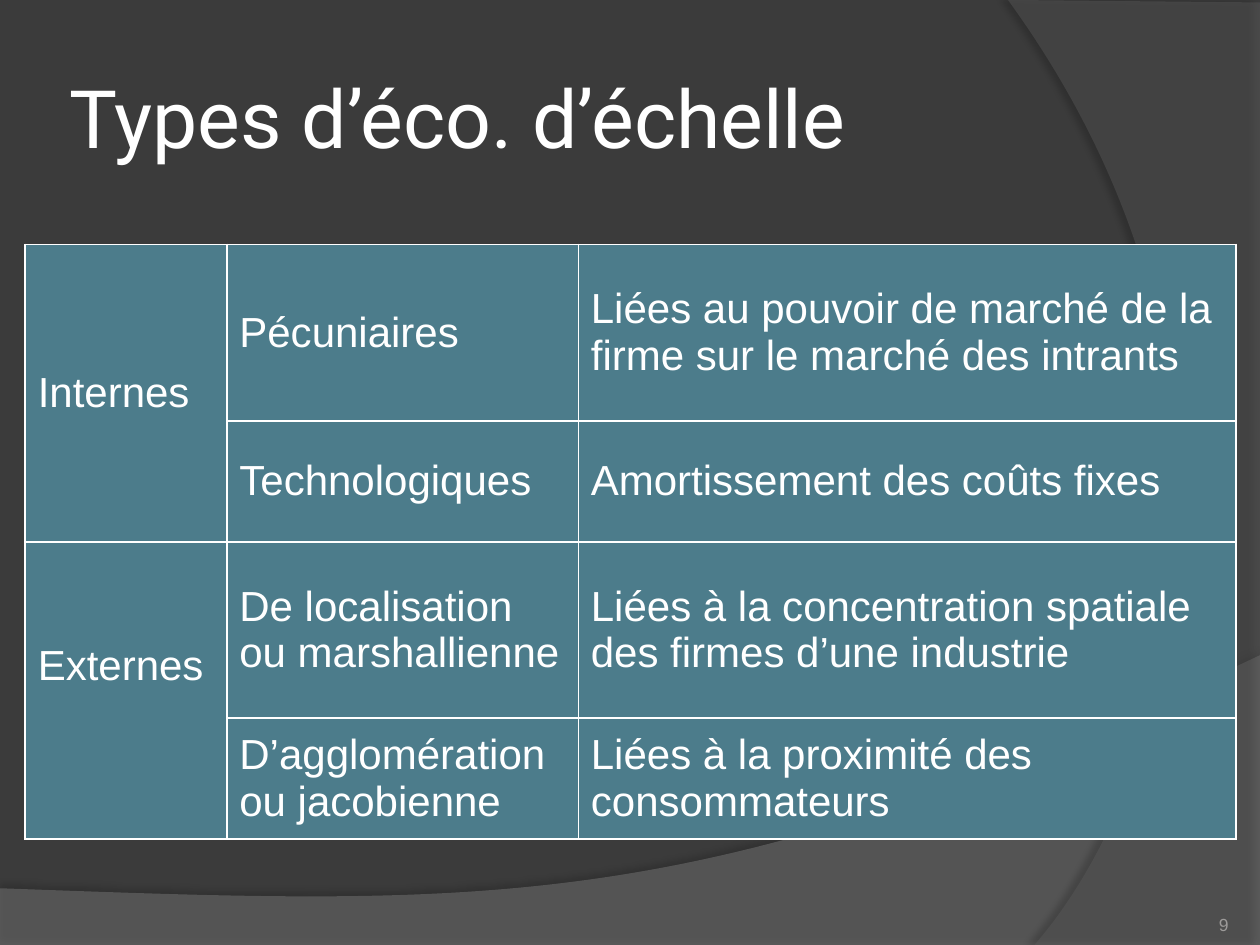
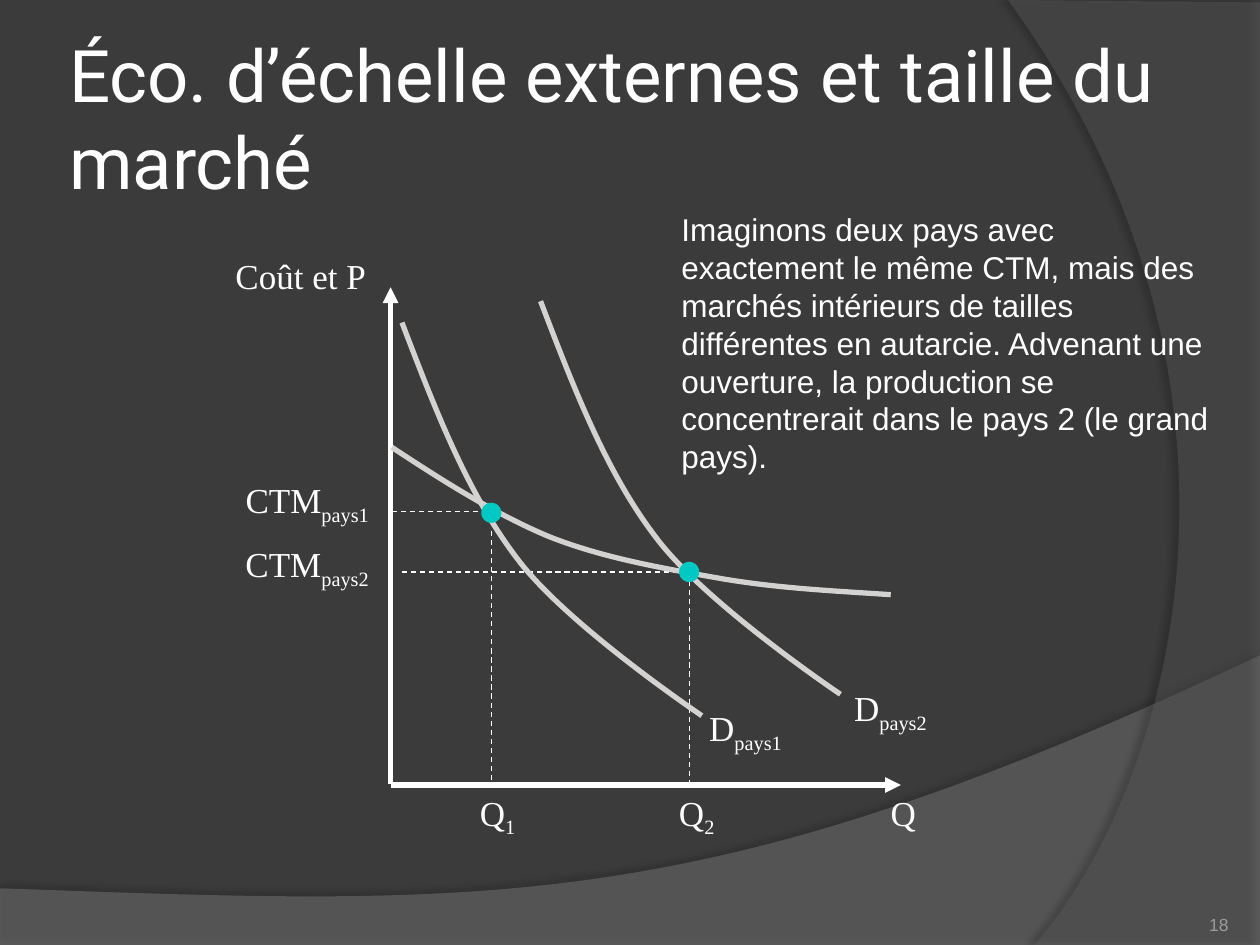
from dataclasses import dataclass

from lxml.etree import Element, SubElement
from pptx import Presentation
from pptx.dml.color import RGBColor
from pptx.enum.dml import MSO_LINE
from pptx.enum.shapes import MSO_CONNECTOR, MSO_SHAPE
from pptx.enum.text import MSO_ANCHOR, MSO_AUTO_SIZE, PP_ALIGN
from pptx.oxml.ns import qn
from pptx.util import Inches, Pt

BACKGROUND = RGBColor(0x3B, 0x3B, 0x3B)
LOWER_BAND = RGBColor(0x7F, 0x7F, 0x7F)
RIGHT_BAND = RGBColor(0x5E, 0x5E, 0x5E)
BLACK = RGBColor(0, 0, 0)
WHITE = RGBColor(0xFF, 0xFF, 0xFF)
NUMBER_GREY = RGBColor(0x9D, 0x9B, 0x9A)
CELL_TEAL = RGBColor(0x4C, 0x7C, 0x8B)
CURVE_GREY = RGBColor(0xD4, 0xD2, 0xD0)
DOT_CYAN = RGBColor(0x00, 0xC8, 0xC3)

TITLE_FONT, BODY_FONT, GRAPH_FONT = "Roboto", "Arial", "Times New Roman"
DOT_SIZE = 0.16
LABEL_HEIGHT = 0.44

Point = tuple[float, float]
Step = tuple[Point, ...]


@dataclass(frozen=True)
class TextStyle:
    """Look of a whole paragraph."""

    font: str
    size: float
    color: RGBColor = WHITE
    align: PP_ALIGN = PP_ALIGN.LEFT


@dataclass(frozen=True)
class Band:
    """Translucent background sweep with a soft shadow."""

    start: Point
    steps: tuple[Step, ...]
    color: RGBColor
    opacity: int
    shadow_opacity: int
    shadow_distance: float
    shadow_angle: int


@dataclass(frozen=True)
class Label:
    """Graph label with an optional subscript."""

    text: str
    subscript: str
    left: float
    top: float
    width: float
    wrap: bool = False


@dataclass(frozen=True)
class Segment:
    """Straight line of the graph: an axis or a dashed guide."""

    start: Point
    end: Point
    axis: bool = False


NUMBER_STYLE = TextStyle(BODY_FONT, 10, NUMBER_GREY, PP_ALIGN.RIGHT)
CELL_STYLE = TextStyle(BODY_FONT, 24)
COMMENT_STYLE = TextStyle(BODY_FONT, 18)
LABEL_STYLE = TextStyle(GRAPH_FONT, 20)

BANDS = (
    Band((0, 7.05), (((0, 7.51),), ((10, 7.51),), ((10, 5.2),), ((5.59, 7.29), (3.91, 7.19), (0, 7.05))),
         LOWER_BAND, 45, 35, 3.5, 270),
    Band((10, 0.02), (((10, 7.5),), ((8.21, 7.5),), ((9.35, 6.19), (10.18, 3), (8, 0))),
         RIGHT_BAND, 40, 45, 4, 180),
)

COLUMN_WIDTHS = (1.6, 2.79, 5.22)
ROW_HEIGHTS = (1.4, 0.96, 1.4, 0.96)
ECONOMIES = (
    ("Internes", "Pécuniaires", "Liées au pouvoir de marché de la firme sur le marché des intrants"),
    ("", "Technologiques", "Amortissement des coûts fixes"),
    ("Externes", "De localisation ou marshallienne", "Liées à la concentration spatiale des firmes d’une industrie"),
    ("", "D’agglomération ou jacobienne", "Liées à la proximité des consommateurs"),
)
COMMENT = (
    "Imaginons deux pays avec exactement le même CTM, mais des marchés intérieurs de tailles "
    "différentes en autarcie. Advenant une ouverture, la production se concentrerait dans le "
    "pays 2 (le grand pays)."
)

SEGMENTS = (
    Segment((3.1, 6.23), (7.15, 6.23), axis=True),
    Segment((3.1, 6.22), (3.1, 2.28), axis=True),
    Segment((3.19, 4.54), (5.47, 4.54)),
    Segment((5.47, 6.23), (5.47, 4.62)),
    Segment((3.11, 4.06), (3.9, 4.06)),
    Segment((3.9, 6.19), (3.9, 4.19)),
)
COST_START = (3.11, 3.55)
COST_STEPS = (
    ((3.52, 3.82), (3.93, 4.08), (4.36, 4.26)),
    ((4.79, 4.43), (5.26, 4.51), (5.71, 4.59)),
    ((6.17, 4.67), (6.62, 4.69), (7.07, 4.72)),
)
DEMAND_STARTS = ((4.29, 2.39), (3.19, 2.56))
DEMAND_OFFSETS = (
    ((0.26, 0.68), (0.52, 1.36), (0.92, 1.88)),
    ((1.31, 2.4), (2.38, 3.12), (2.38, 3.12)),
)
EQUILIBRIA = ((5.47, 4.54), (3.9, 4.07))
LABELS = (
    Label("Q", "", 6.97, 6.23, 0.41),
    Label("Coût et P", "", 1.77, 1.97, 1.25),
    Label("CTM", "pays2", 1.85, 4.26, 1.57, wrap=True),
    Label("CTM", "pays1", 1.85, 3.75, 1.42, wrap=True),
    Label("Q", "2", 5.29, 6.23, 0.5),
    Label("Q", "1", 3.71, 6.23, 0.5),
    Label("D", "pays1", 5.53, 5.56, 0.84),
    Label("D", "pays2", 6.68, 5.4, 0.84),
)


def add_outline(page, start: Point, steps: tuple[Step, ...], close: bool):
    """Draw a freeform whose one-point steps are lines and three-point steps are curves."""
    builder = page.shapes.build_freeform(*map(Inches, start))
    builder.add_line_segments([tuple(map(Inches, step[-1])) for step in steps], close=close)
    outline = builder.convert_to_shape()
    outline.shadow.inherit = False
    for piece, step in zip(list(outline._element.iter(qn("a:lnTo"))), steps):
        if len(step) == 3:
            piece.tag = qn("a:cubicBezTo")
            for index, (x, y) in enumerate(step[:2]):
                piece.insert(index, Element(
                    qn("a:pt"), x=str(Inches(x) - outline.left), y=str(Inches(y) - outline.top)))
    return outline


def set_opacity(color_element, percent: int) -> None:
    """Give a colour element an alpha value."""
    SubElement(color_element, qn("a:alpha"), val=str(percent * 1000))


def add_band(page, band: Band) -> None:
    """Draw one background sweep."""
    shape = add_outline(page, band.start, band.steps, close=True)
    shape.fill.solid()
    shape.fill.fore_color.rgb = band.color
    shape.line.fill.background()
    properties = shape._element.spPr
    set_opacity(properties.find(qn("a:solidFill")).find(qn("a:srgbClr")), band.opacity)
    shadow = SubElement(
        properties.find(qn("a:effectLst")), qn("a:outerShdw"), blurRad=str(Pt(4)),
        dist=str(Pt(band.shadow_distance)), dir=str(band.shadow_angle * 60000), rotWithShape="0")
    set_opacity(SubElement(shadow, qn("a:srgbClr"), val=str(BLACK)), band.shadow_opacity)


def write(frame, text: str, style: TextStyle, subscript: str = "") -> None:
    """Fill a text frame with one styled paragraph."""
    para = frame.paragraphs[0]
    para.alignment = style.align
    para.font.name = style.font
    para.font.size = Pt(style.size)
    para.font.color.rgb = style.color
    para.add_run().text = text
    if subscript:
        span = para.add_run()
        span.text = subscript
        span._r.get_or_add_rPr().set("baseline", "-25000")


def add_text(page, text: str, style: TextStyle, left: float, top: float, width: float, height: float,
             subscript: str = "", wrap: bool = True, anchor: MSO_ANCHOR = MSO_ANCHOR.TOP,
             inset: float | None = None) -> None:
    """Add a text box; a box without its own inset grows with its text."""
    box = page.shapes.add_textbox(Inches(left), Inches(top), Inches(width), Inches(height))
    frame = box.text_frame
    frame.word_wrap = wrap
    frame.vertical_anchor = anchor
    if inset is None:
        frame.auto_size = MSO_AUTO_SIZE.SHAPE_TO_FIT_TEXT
    else:
        frame.margin_left = frame.margin_right = Inches(inset)
        frame.margin_top = frame.margin_bottom = Inches(inset)
    write(frame, text, style, subscript)


def add_page(deck, title: str, title_size: float, title_width: float, number: int):
    """Add a slide with background, bands, title and number."""
    page = deck.slides.add_slide(deck.slide_layouts[6])
    page.background.fill.solid()
    page.background.fill.fore_color.rgb = BACKGROUND
    for band in BANDS:
        add_band(page, band)
    add_text(page, title, TextStyle(TITLE_FONT, title_size), 0.5, 0.3, title_width, 1.25,
             anchor=MSO_ANCHOR.MIDDLE, inset=0.05)
    add_text(page, str(number), NUMBER_STYLE, 8.92, 7.02, 0.83, 0.4, anchor=MSO_ANCHOR.BOTTOM, inset=0)
    return page


def style_cell(cell) -> None:
    """Give a cell its white borders, teal fill and middle anchor."""
    properties = cell._tc.get_or_add_tcPr()
    for side in ("a:lnL", "a:lnR", "a:lnT", "a:lnB"):
        border = SubElement(properties, qn(side), w=str(Pt(1)))
        SubElement(SubElement(border, qn("a:solidFill")), qn("a:srgbClr"), val=str(WHITE))
    cell.fill.solid()
    cell.fill.fore_color.rgb = CELL_TEAL
    cell.vertical_anchor = MSO_ANCHOR.MIDDLE


def add_economies_table(page) -> None:
    """Add the table of internal and external economies."""
    table = page.shapes.add_table(
        len(ROW_HEIGHTS), len(COLUMN_WIDTHS), Inches(0.2), Inches(1.94),
        Inches(sum(COLUMN_WIDTHS)), Inches(sum(ROW_HEIGHTS))).table
    table.first_row = table.horz_banding = False
    for column, width in zip(table.columns, COLUMN_WIDTHS):
        column.width = Inches(width)
    for row, height, texts in zip(table.rows, ROW_HEIGHTS, ECONOMIES):
        row.height = Inches(height)
        for cell, text in zip(row.cells, texts):
            style_cell(cell)
            if text:
                write(cell.text_frame, text, CELL_STYLE)
    for top in (0, 2):
        table.cell(top, 0).merge(table.cell(top + 1, 0))
    table.cell(2, 0).margin_bottom = Inches(0.44)


def add_segment(page, segment: Segment) -> None:
    """Draw an axis with an arrowhead or a thin dashed guide."""
    ends = [Inches(value) for value in (*segment.start, *segment.end)]
    connector = page.shapes.add_connector(MSO_CONNECTOR.STRAIGHT, *ends)
    connector.line.color.rgb = WHITE
    connector.line.width = Pt(3 if segment.axis else 0.75)
    if segment.axis:
        SubElement(connector.line._get_or_add_ln(), qn("a:tailEnd"), type="triangle")
    else:
        connector.line.dash_style = MSO_LINE.DASH
    SubElement(connector._element.spPr, qn("a:effectLst"))


def add_curve(page, start: Point, steps: tuple[Step, ...]) -> None:
    """Draw a smooth open curve."""
    curve = add_outline(page, start, steps, close=False)
    curve.fill.background()
    curve.line.color.rgb = CURVE_GREY
    curve.line.width = Pt(3)


def add_dot(page, center: Point) -> None:
    """Mark an equilibrium."""
    left, top = (Inches(value - DOT_SIZE / 2) for value in center)
    dot = page.shapes.add_shape(
        MSO_SHAPE.FLOWCHART_CONNECTOR, left, top, Inches(DOT_SIZE), Inches(DOT_SIZE))
    dot.shadow.inherit = False
    dot.fill.solid()
    dot.fill.fore_color.rgb = DOT_CYAN
    dot.line.fill.background()


def add_market_graph(page) -> None:
    """Draw axes, cost and demand curves, labels and equilibria."""
    for segment in SEGMENTS:
        add_segment(page, segment)
    add_curve(page, COST_START, COST_STEPS)
    for left, top in DEMAND_STARTS:
        steps = tuple(tuple((left + x, top + y) for x, y in step) for step in DEMAND_OFFSETS)
        add_curve(page, (left, top), steps)
    for label in LABELS:
        add_text(page, label.text, LABEL_STYLE, label.left, label.top, label.width, LABEL_HEIGHT,
                 subscript=label.subscript, wrap=label.wrap)
    for center in EQUILIBRIA:
        add_dot(page, center)


def main() -> None:
    """Build and save the two slides."""
    deck = Presentation()
    deck.slide_width, deck.slide_height = Inches(10), Inches(7.5)
    add_economies_table(add_page(deck, "Types d’éco. d’échelle", 46, 8.17, 9))
    page = add_page(deck, "Éco. d’échelle externes et taille du marché", 41.4, 9.5, 18)
    add_market_graph(page)
    add_text(page, COMMENT, COMMENT_STYLE, 5.31, 1.62, 4.41, 2.22)
    deck.save("out.pptx")


if __name__ == "__main__":
    main()
